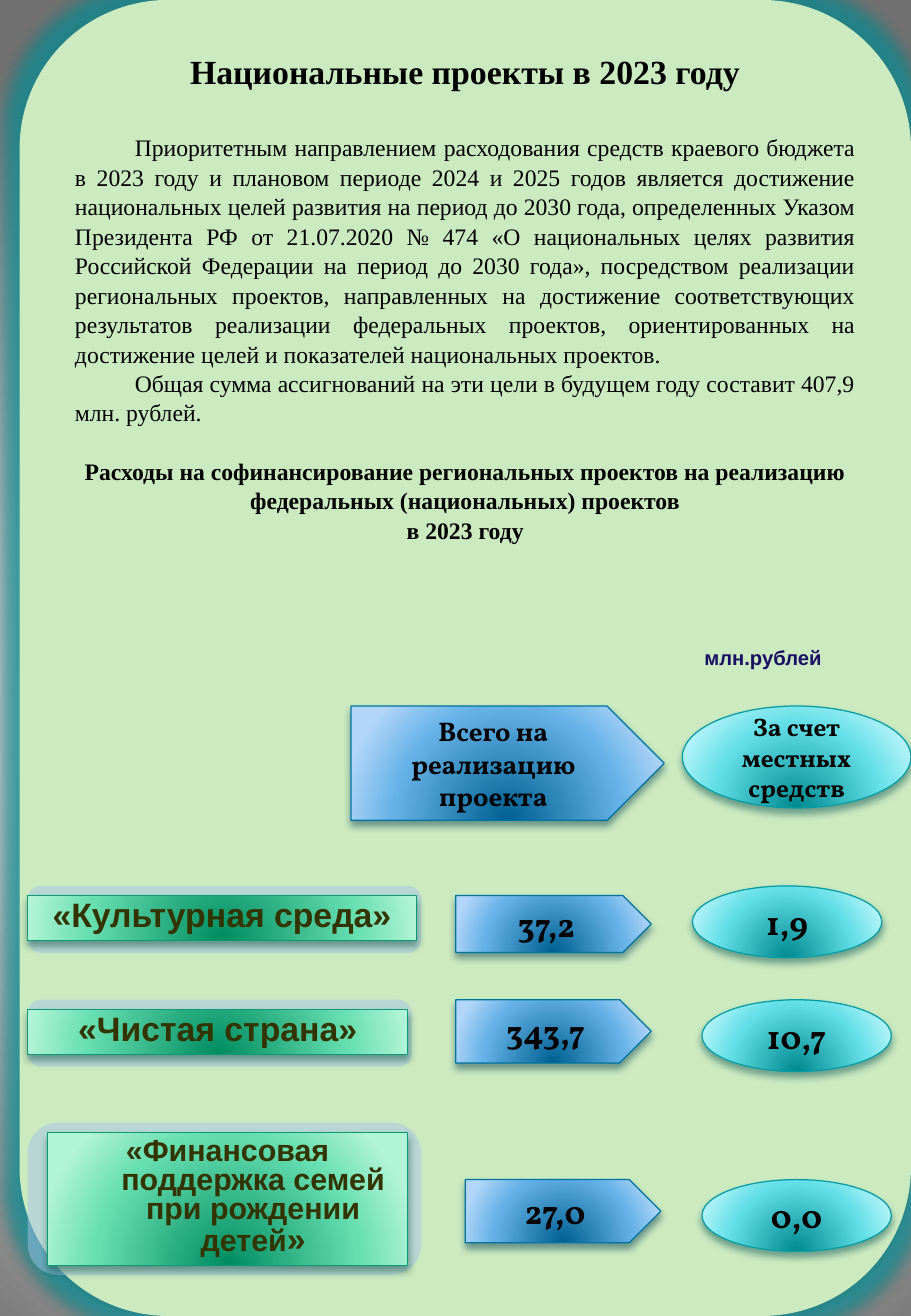
"""Builds the page on national projects in 2023."""
from lxml import etree
from pptx import Presentation
from pptx import util as u
from pptx.dml.color import RGBColor
from pptx.enum import shapes, text
from pptx.oxml import ns

BLUE = ("006091", "64B1E7", "B1D6F9"), "0074A1", "00374C"
TEAL = ("008A91", "64DFE7", "B1F3F9"), "069CA3", "024B4E"
GREEN = ("008C60", "65DEB0", "B2F4D6"), "0A9B74", "044A37"
SHAPE = shapes.MSO_SHAPE
CENTER, JUSTIFY = text.PP_ALIGN.CENTER, text.PP_ALIGN.JUSTIFY
TOP, MIDDLE = text.MSO_ANCHOR.TOP, text.MSO_ANCHOR.MIDDLE
INTRO = (
    "Приоритетным направлением расходования средств краевого бюджета в 2023 году "
    "и плановом периоде 2024 и 2025 годов является достижение национальных целей "
    "развития на период до 2030 года, определенных Указом Президента РФ от "
    "21.07.2020 № 474 «О национальных целях развития Российской Федерации на период "
    "до 2030 года», посредством реализации региональных проектов, направленных на "
    "достижение соответствующих результатов реализации федеральных проектов, "
    "ориентированных на достижение целей и показателей национальных проектов."
)
TOTAL = "Общая сумма ассигнований на эти цели в будущем году составит 407,9 млн. рублей."
HEADING = ("Расходы на софинансирование региональных проектов на реализацию "
           "федеральных (национальных) проектов")
PROJECTS = [
    ("«Культурная среда", 20, (0.58, 18.52, 8.23, 1.4), (0.58, 18.72, 8.13, 0.94),
     "37,2", (9.53, 18.72, 4.09, 1.19), "1,9", (14.48, 18.52)),
    ("«Чистая страна", 20, (0.58, 20.9, 8.03, 1.4), (0.58, 21.11, 7.95, 0.94),
     "343,7", (9.53, 20.9, 4.09, 1.32), "10,7", (14.68, 20.9)),
    ("«Финансовая поддержка семей при рождении детей", 18,
     (0.58, 23.47, 8.23, 3.18), (0.99, 23.67, 7.54, 2.79),
     "27,0", (9.73, 24.66, 4.09, 1.32), "0,0", (14.68, 24.66)),
]


def color(value):
    """Turn a hex string into a colour."""
    return RGBColor.from_string(value)


def add_node(parent, tag, **attributes):
    """Append a drawing element with the given attributes."""
    node = etree.SubElement(parent, ns.qn("a:" + tag))
    for name, value in attributes.items():
        node.set(name, str(value))
    return node


def add_color(parent, value, alpha):
    """Append a colour with an opacity in percent."""
    add_node(add_node(parent, "srgbClr", val=value), "alpha", val=alpha * 1000)


def paint_radial(fill, owner, stops, focus):
    """Fill with a circular gradient around a focus rectangle in percent."""
    fill.gradient()
    gradient = owner.find(".//" + ns.qn("a:gradFill"))
    for child in list(gradient):
        gradient.remove(child)
    stop_list = add_node(gradient, "gsLst")
    for position, value in stops:
        stop = add_node(stop_list, "gs", pos=position * 1000)
        add_node(stop, "srgbClr", val=value)
    circle = add_node(gradient, "path", path="circle")
    add_node(circle, "fillToRect", **{side: share * 1000 for side, share in zip("ltrb", focus)})


def add_shadow(shape, value, alpha, blur, distance, glow=None):
    """Give a shape a downward shadow and, if asked, a glow."""
    shape.shadow.inherit = False
    effects = shape._element.spPr.find(ns.qn("a:effectLst"))
    if glow:
        add_color(add_node(effects, "glow", rad=u.Pt(18)), glow, 60)
    shadow = add_node(effects, "outerShdw", blurRad=u.Pt(blur), dist=u.Pt(distance),
                      dir=5400000, rotWithShape=0)
    add_color(shadow, value, alpha)


def add_plain(page, kind, area, fill):
    """Add a shape with a flat fill and no outline."""
    shape = page.shapes.add_shape(kind, *map(u.Cm, area))
    shape.shadow.inherit = False
    shape.fill.solid()
    shape.fill.fore_color.rgb = color(fill)
    shape.line.fill.background()
    return shape


def add_glossy(page, kind, area, palette):
    """Add a shape with a radial gradient, a thin outline and a shadow."""
    stops, outline, shade = palette
    shape = page.shapes.add_shape(kind, *map(u.Cm, area))
    paint_radial(shape.fill, shape._element.spPr, zip((0, 68, 100), stops), (50, 130, 50, -30))
    shape.line.color.rgb = color(outline)
    shape.line.width = u.Pt(0.75)
    add_shadow(shape, shade, 48, 4.5, 3)
    return shape


def write(para, words, size, font, bold=True, ink="000000", align=CENTER):
    """Write one paragraph in one font."""
    para.text = words
    para.alignment = align
    para.font.size = u.Pt(size)
    para.font.name = font
    para.font.bold = bold
    para.font.color.rgb = color(ink)


def add_figure(page, kind, area, palette, words, size=20):
    """Add a glossy shape with centred words."""
    box = add_glossy(page, kind, area, palette)
    box.text_frame.vertical_anchor = MIDDLE
    write(box.text_frame.paragraphs[0], words, size, "Vollkorn")


def add_project_name(page, name, size, back_area, area):
    """Add a project's name plate on its translucent backing."""
    back = add_plain(page, SHAPE.ROUNDED_RECTANGLE, back_area, "A5C4E9")
    back.adjustments[0] = 0.2
    tint = back._element.spPr.find(ns.qn("a:solidFill"))[0]
    add_node(tint, "alpha", val=49000)
    frame = add_glossy(page, SHAPE.RECTANGLE, area, GREEN).text_frame
    frame.vertical_anchor = TOP
    frame.word_wrap = True
    frame.auto_size = text.MSO_AUTO_SIZE.SHAPE_TO_FIT_TEXT
    para = frame.paragraphs[0]
    write(para, name, size, "Arial", ink="333300")
    span = para.add_run()
    span.text = "»"
    span.font.size = u.Pt(20)
    para.line_spacing = 0.8
    para.space_before = u.Pt(4)
    properties = para._p.get_or_add_pPr()
    properties.set("marL", str(u.Cm(1.07)))
    properties.set("indent", str(u.Cm(-1.07)))


def add_panel(page):
    """Add the green panel with the title, introduction and heading."""
    panel = add_plain(page, SHAPE.ROUNDED_RECTANGLE, (0.41, 0, 18.64, 27.51), "CBEAC0")
    add_shadow(panel, "000000", 32, 3.5, 2.2, glow="009DA5")
    frame = panel.text_frame
    frame.vertical_anchor = TOP
    paragraphs = [
        ("Национальные проекты в 2023 году", 20, True, 0, 24),
        (INTRO, 14, False, 0, 0),
        (TOTAL, 14, False, 0, 0),
        (HEADING, 14, True, 17, 0),
        ("в 2023 году", 14, True, 0, 0),
    ]
    for index, (words, size, bold, before, after) in enumerate(paragraphs):
        para = frame.add_paragraph() if index else frame.paragraphs[0]
        write(para, words, size, "Times New Roman", bold, align=CENTER if bold else JUSTIFY)
        para.line_spacing = 1.04
        para.space_before, para.space_after = u.Pt(before), u.Pt(after)
        if not bold:
            para._p.get_or_add_pPr().set("indent", str(u.Cm(1.25)))


def add_unit(page):
    """Add the unit of measure above the columns."""
    box = page.shapes.add_textbox(*map(u.Cm, (14.48, 13.36, 3.96, 0.76)))
    box.text_frame.word_wrap = True
    write(box.text_frame.paragraphs[0], "млн.рублей", 12, "Arial", ink="190F65",
          align=text.PP_ALIGN.LEFT)


def main():
    """Build and save the deck."""
    deck = Presentation()
    deck.slide_width, deck.slide_height = u.Cm(19.05), u.Cm(27.51)
    page = deck.slides.add_slide(deck.slide_layouts[6])
    paint_radial(page.background.fill, page._element,
                 [(0, "FFFFFF"), (25, "FFFFFF"), (100, "707070")], (10, 110, 10, 100))
    add_panel(page)
    add_unit(page)
    add_figure(page, SHAPE.PENTAGON, (7.34, 14.76, 6.55, 2.39), BLUE,
               "Всего на реализацию проекта", 16)
    add_figure(page, SHAPE.OVAL, (14.27, 14.76, 4.78, 2.13), TEAL, "За счет местных средств", 15)
    for name, size, back_area, area, total, plate, local, corner in PROJECTS:
        add_project_name(page, name, size, back_area, area)
        add_figure(page, SHAPE.PENTAGON, plate, BLUE, total)
        add_figure(page, SHAPE.OVAL, (*corner, 3.96, 1.5), TEAL, local)
    deck.save("out.pptx")


if __name__ == "__main__":
    main()
